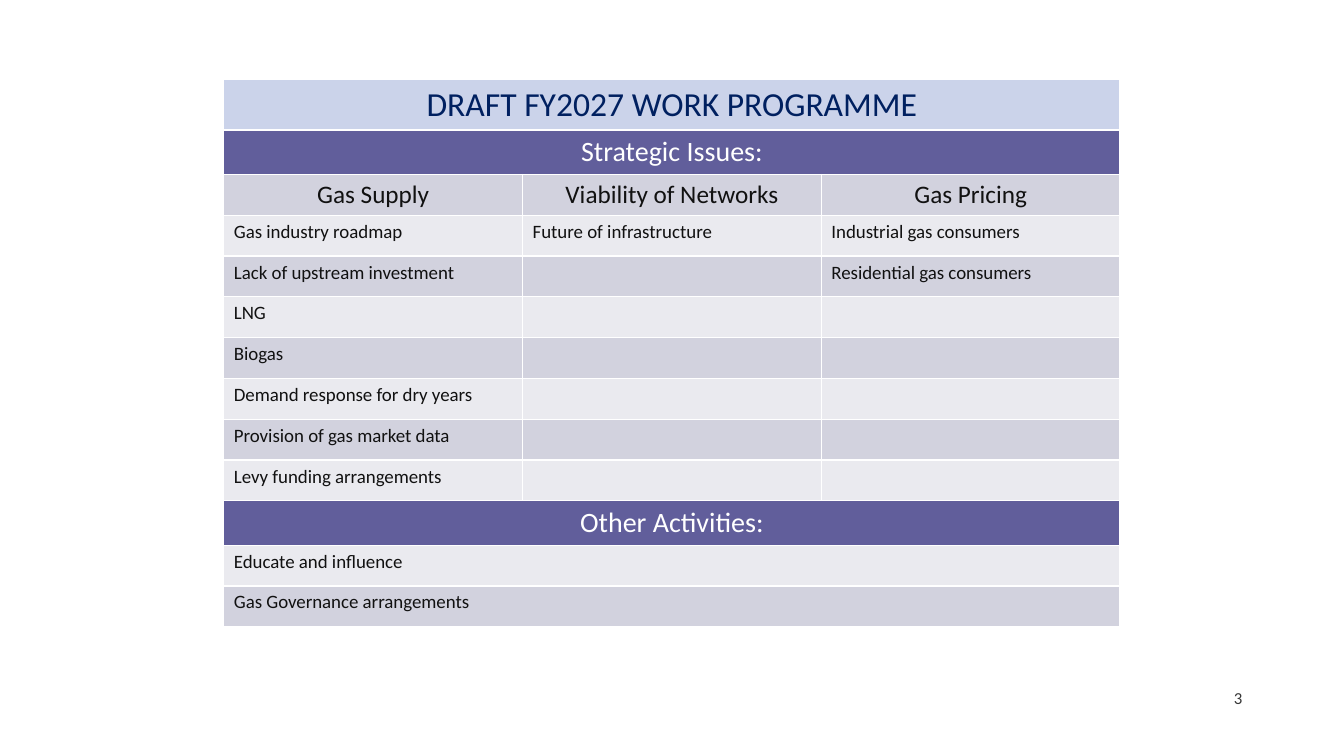
from lxml import etree
from pptx import Presentation
from pptx.dml.color import RGBColor
from pptx.enum.text import MSO_ANCHOR, PP_ALIGN
from pptx.oxml.ns import qn
from pptx.util import Inches, Pt

LEFT, CENTER, RIGHT = PP_ALIGN.LEFT, PP_ALIGN.CENTER, PP_ALIGN.RIGHT
MIDDLE = MSO_ANCHOR.MIDDLE
FONT = "Calibri"
WHITE, INK, GREY, NAVY = "FFFFFF", "111111", "373737", "002060"
SKY, PURPLE = "CBD3EA", "615E9B"
DARK, LIGHT = "D2D2DE", "EAEAEF"

STYLES = {
    "title": (24, NAVY, CENTER, 0.5),
    "band": (20, WHITE, CENTER, 0.44),
    "head": (18, INK, CENTER, None),
    "item": (13.5, INK, LEFT, None),
}
ROWS = [
    ("title", SKY, ["DRAFT FY2027 WORK PROGRAMME"]),
    ("band", PURPLE, ["Strategic Issues:"]),
    ("head", DARK, ["Gas Supply", "Viability of Networks", "Gas Pricing"]),
    ("item", LIGHT, ["Gas industry roadmap", "Future of infrastructure",
                     "Industrial gas consumers"]),
    ("item", DARK, ["Lack of upstream investment", "",
                    "Residential gas consumers"]),
    ("item", LIGHT, ["LNG", "", ""]),
    ("item", DARK, ["Biogas", "", ""]),
    ("item", LIGHT, ["Demand response for dry years", "", ""]),
    ("item", DARK, ["Provision of gas market data", "", ""]),
    ("item", LIGHT, ["Levy funding arrangements", "", ""]),
    ("band", PURPLE, ["Other Activities:"]),
    ("item", LIGHT, ["Educate and influence"]),
    ("item", DARK, ["Gas Governance arrangements"]),
]


def color(code):
    return RGBColor.from_string(code)


def write(frame, text, size, ink, align):
    para = frame.paragraphs[0]
    para.alignment = align
    run = para.add_run()
    run.text = text
    run.font.name = FONT
    run.font.size = Pt(size)
    run.font.color.rgb = color(ink)


def edge(cell):
    props = cell._tc.get_or_add_tcPr()
    for spot, side in enumerate(("lnL", "lnR", "lnT", "lnB")):
        line = etree.Element(qn("a:" + side), w=str(Pt(1)))
        fill = etree.SubElement(line, qn("a:solidFill"))
        etree.SubElement(fill, qn("a:srgbClr"), val=WHITE)
        props.insert(spot, line)


def add_plan(slide, left, top, width, height, cols=3):
    table = slide.shapes.add_table(
        len(ROWS), cols, Inches(left), Inches(top),
        Inches(width), Inches(height)).table
    table.first_row = False
    table.horz_banding = False
    fixed = [STYLES[kind][3] for kind, _, _ in ROWS]
    rest = (height - sum(tall or 0 for tall in fixed)) / fixed.count(None)
    for col in table.columns:
        col.width = Inches(width / cols)
    for at, (kind, fill, texts) in enumerate(ROWS):
        size, ink, align, tall = STYLES[kind]
        table.rows[at].height = Inches(tall or rest)
        for col in range(cols):
            cell = table.cell(at, col)
            cell.fill.solid()
            cell.fill.fore_color.rgb = color(fill)
            edge(cell)
        if len(texts) == 1:
            table.cell(at, 0).merge(table.cell(at, cols - 1))
        for col, text in enumerate(texts):
            if text:
                frame = table.cell(at, col).text_frame
                write(frame, text, size, ink, align)


def add_page(slide, left, top, width, height):
    box = slide.shapes.add_textbox(
        Inches(left), Inches(top), Inches(width), Inches(height))
    frame = box.text_frame
    frame.word_wrap = True
    frame.vertical_anchor = MIDDLE
    write(frame, "3", 12, GREY, RIGHT)


def main():
    deck = Presentation()
    deck.slide_width = Inches(13.33)
    deck.slide_height = Inches(7.5)
    slide = deck.slides.add_slide(deck.slide_layouts[6])
    add_page(slide, 9.42, 6.72, 3, 0.4)
    add_plan(slide, 2.22, 0.79, 8.89, 5.43)
    deck.save("out.pptx")


if __name__ == "__main__":
    main()
